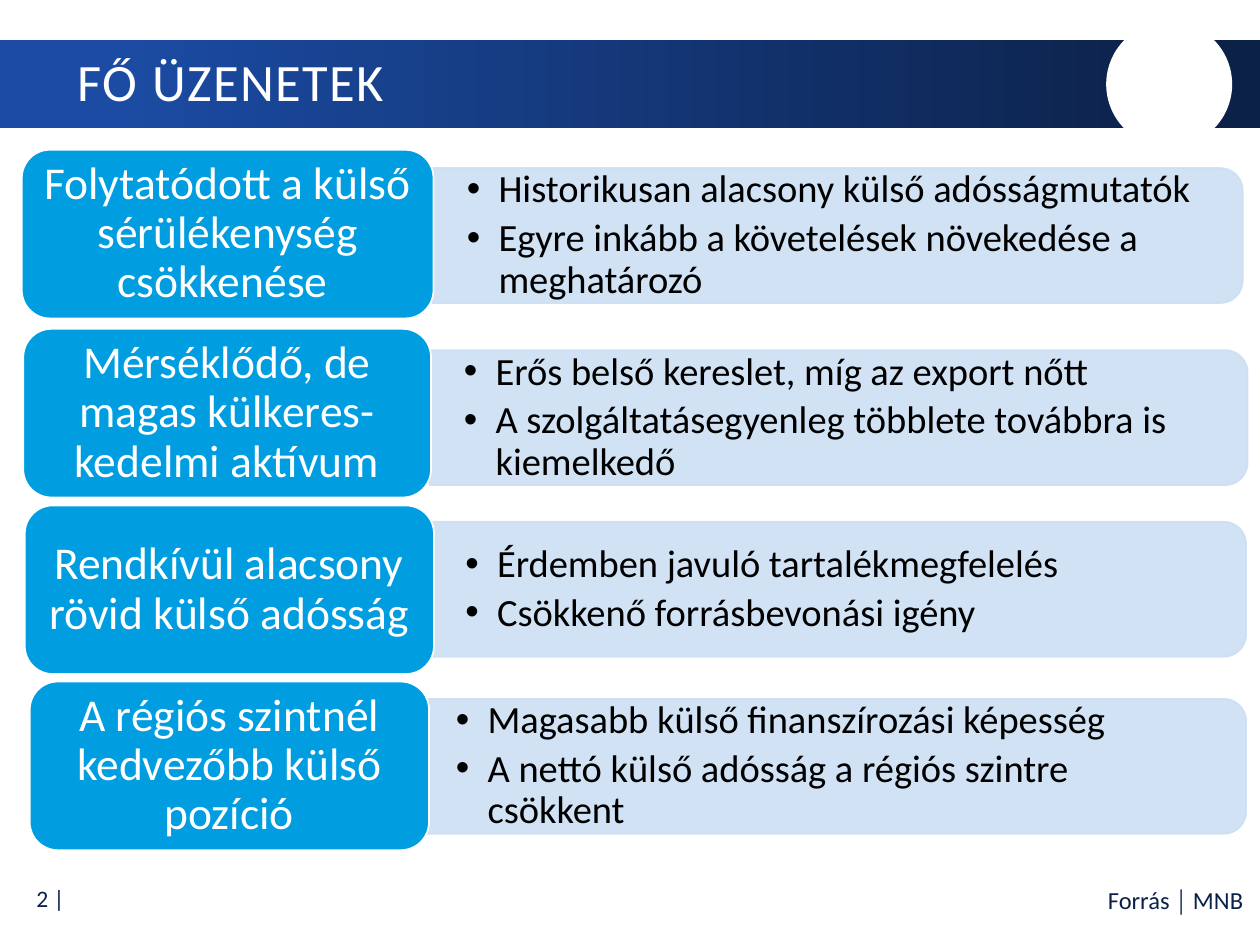
"""Build the key messages slide: four labelled bands with bullet lists."""
from lxml.etree import SubElement
from pptx import Presentation
from pptx.dml.color import RGBColor
from pptx.enum.shapes import MSO_SHAPE as Shape
from pptx.enum.text import MSO_ANCHOR as Anchor, MSO_AUTO_SIZE as AutoSize, PP_ALIGN as Align
from pptx.oxml.ns import qn
from pptx.util import Cm, Pt

WHITE = RGBColor(0xFF, 0xFF, 0xFF)
BLACK = RGBColor(0x00, 0x00, 0x00)
NAVY = RGBColor(0x0C, 0x21, 0x48)
ROYAL = RGBColor(0x1B, 0x4B, 0xA3)
SKY = RGBColor(0x00, 0x9E, 0xE0)
PALE = RGBColor(0xCC, 0xDF, 0xF3)

LABEL_HEIGHT = 3.4
BAND_HEIGHT = 2.72
LIST_HEIGHT = 2.46

# label left, label width, label top, band left, band right, band centre
MESSAGES = [
    ("Folytatódott a külső sérülékenység csökkenése ",
     ["Historikusan alacsony külső adósságmutatók",
      "Egyre inkább a követelések növekedése a meghatározó"],
     (0.44, 8.3, 3.02), (8.72, 25.05, 4.75)),
    ("Mérséklődő, de magas külkeres-kedelmi aktívum",
     ["Erős belső kereslet, míg az export nőtt",
      "A szolgáltatásegyenleg többlete továbbra is kiemelkedő"],
     (0.47, 8.22, 6.63), (8.66, 25.15, 8.42)),
    ("Rendkívül alacsony rövid külső adósság ",
     ["Érdemben javuló tartalékmegfelelés", "Csökkenő forrásbevonási igény"],
     (0.5, 8.25, 10.19), (8.69, 25.12, 11.88)),
    ("A régiós szintnél kedvezőbb külső pozíció",
     ["Magasabb külső finanszírozási képesség",
      "A nettó külső adósság a régiós szintre csökkent"],
     (0.6, 8.05, 13.74), (8.5, 25.12, 15.45)),
]


class MessageSlide:
    """Hold the style and the slide being filled."""

    def __init__(self, slide, font="Calibri"):
        self.slide = slide
        self.font = font

    def place(self, item, left, top, width, height):
        item.left, item.top = Cm(left), Cm(top)
        item.width, item.height = Cm(width), Cm(height)

    def style(self, paragraph, size, color, align=Align.LEFT, spacing=None):
        paragraph.alignment = align
        if spacing:
            paragraph.line_spacing = spacing
        font = paragraph.font
        font.name, font.size, font.bold = self.font, Pt(size), False
        font.color.rgb = color

    def frame(self, item, margins=(0.25, 0.13)):
        frame = item.text_frame
        frame.word_wrap = True
        frame.auto_size = AutoSize.NONE
        frame.vertical_anchor = Anchor.MIDDLE
        frame.margin_left = frame.margin_right = Cm(margins[0])
        frame.margin_top = frame.margin_bottom = Cm(margins[1])
        return frame

    def shape(self, preset, box, color=None, line=None):
        shape = self.slide.shapes.add_shape(preset, *(Cm(length) for length in box))
        shape.shadow.inherit = False
        if color is not None:
            shape.fill.solid()
            shape.fill.fore_color.rgb = color
        if line is None:
            shape.line.fill.background()
        else:
            shape.line.color.rgb = line
            shape.line.width = Pt(1)
        return shape

    def header(self, text):
        banner = self.shape(Shape.RECTANGLE, (0, 0.81, 25.4, 1.78))
        banner.fill.gradient()
        banner.fill.gradient_angle = 0
        for stop, position, color in zip(banner.fill.gradient_stops, (0.09, 0.95), (ROYAL, NAVY)):
            stop.position = position
            stop.color.rgb = color
        emblem = self.shape(Shape.OVAL, (22.3, 0.43, 2.54, 2.54), WHITE)
        title = self.slide.shapes.title
        self.place(title, 1.32, 0.86, 21.13, 1.7)
        paragraph = self.frame(title).paragraphs[0]
        run = paragraph.add_run()
        run.text = text
        run._r.get_or_add_rPr().set("spc", "80")
        self.style(paragraph, 30, WHITE, spacing=0.9)
        emblem.element.addnext(title.element)

    def band(self, left, right, centre):
        length = right - left
        middle = (left + right) / 2
        box = (middle - BAND_HEIGHT / 2, centre - length / 2, BAND_HEIGHT, length)
        band = self.shape(Shape.ROUND_2_SAME_RECTANGLE, box, PALE, PALE)
        band.rotation = 90
        for color in band.element.spPr.iter(qn("a:srgbClr")):
            SubElement(color, qn("a:alpha")).set("val", "90000")
        return band

    def bullets(self, body, items, left, right, centre):
        self.place(body, left, centre - LIST_HEIGHT / 2, right - left - 0.13, LIST_HEIGHT)
        frame = self.frame(body, (0.69, 0.36))
        frame.text = "\n".join(items)
        for paragraph in frame.paragraphs:
            properties = paragraph._p.get_or_add_pPr()
            properties.set("marL", str(Cm(0.64)))
            properties.set("indent", str(-Cm(0.64)))
            SubElement(properties, qn("a:buFont")).set("typeface", "Arial")
            SubElement(properties, qn("a:buChar")).set("char", "•")
            paragraph.space_before, paragraph.space_after = Pt(0), Pt(4)
            self.style(paragraph, 22, BLACK, spacing=0.9)

    def label(self, text, left, width, top):
        label = self.shape(Shape.ROUNDED_RECTANGLE, (left, top, width, LABEL_HEIGHT), SKY, WHITE)
        frame = self.frame(label, (0.28, 0.13))
        frame.text = text
        self.style(frame.paragraphs[0], 26, WHITE, Align.CENTER, 0.9)

    def note(self, text, box, size, align):
        note = self.slide.shapes.add_textbox(*(Cm(length) for length in box))
        frame = self.frame(note)
        frame.text = text
        self.style(frame.paragraphs[0], size, NAVY, align)


def main():
    deck = Presentation()
    deck.slide_width, deck.slide_height = Cm(25.4), Cm(19.05)
    slide = deck.slides.add_slide(deck.slide_layouts[4])
    page = MessageSlide(slide)
    bodies = [item for item in slide.placeholders if item.placeholder_format.idx > 0]

    page.header("FŐ ÜZENETEK")
    for body, (heading, items, label_box, band_box) in zip(bodies, MESSAGES):
        band = page.band(*band_box)
        page.bullets(body, items, *band_box)
        band.element.addnext(body.element)
        page.label(heading, *label_box)
    page.note("2 |", (0.03, 17.63, 1.52, 0.94), 13.5, Align.RIGHT)
    page.note("Forrás │ MNB", (22, 17.63, 3.4, 1.02), 14, Align.CENTER)
    deck.save("out.pptx")


if __name__ == "__main__":
    main()
